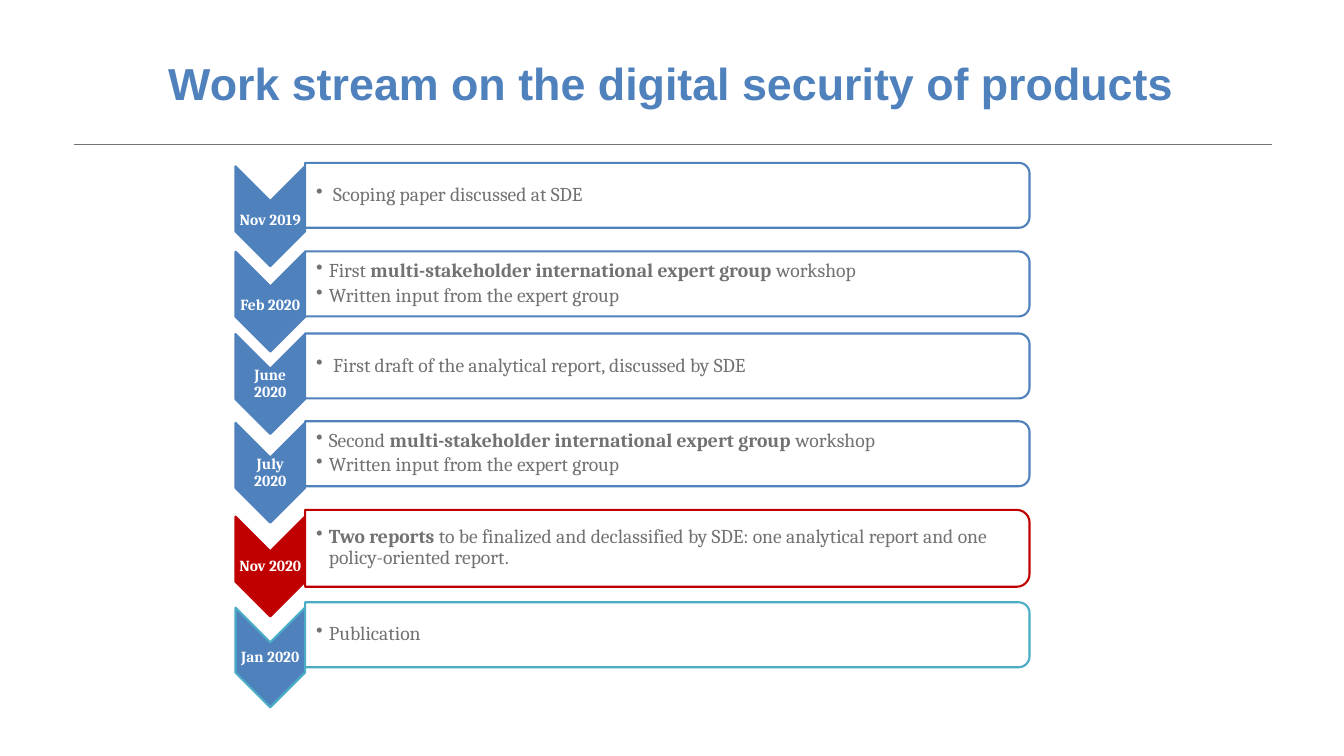
from dataclasses import dataclass

from lxml import etree
from pptx import Presentation
from pptx.dml.color import RGBColor
from pptx.enum.shapes import MSO_CONNECTOR as CONN, MSO_SHAPE as SHAPE
from pptx.enum.text import MSO_ANCHOR as ANCHOR, PP_ALIGN as ALIGN
from pptx.oxml.ns import qn
from pptx.util import Pt

BLUE = RGBColor(0x4F, 0x81, 0xBD)
RED = RGBColor(0xC0, 0x00, 0x00)
TEAL = RGBColor(0x4B, 0xAC, 0xC6)
GREY = RGBColor(0x72, 0x72, 0x72)
WHITE = RGBColor(0xFF, 0xFF, 0xFF)

CHEVRON_W, CHEVRON_H = 49.7, 71.3
LABEL_H = 21.6
BULLET_INDENT = 9


@dataclass
class Step:
    """One milestone: label lines, bullets of (text, bold) runs, and placement."""
    label: list
    bullets: list
    chevron_top: float
    card_top: float
    card_h: float = 46.4
    label_drop: float = 0
    fill: RGBColor = BLUE
    line: RGBColor = BLUE


def workshop(ordinal):
    """Return the bullets of an expert group workshop."""
    return [
        [(ordinal + " ", False),
         ("multi-stakeholder international expert group ", True),
         ("workshop", False)],
        [("Written input from the expert group", False)],
    ]


STEPS = [
    Step(["Nov 2019"], [[(" Scoping paper discussed at SDE", False)]],
         118.8, 116.3, label_drop=3),
    Step(["Feb 2020"], workshop("First"), 179.8, 179.6, label_drop=3),
    Step(["June", "2020"],
         [[(" First draft of the analytical report, discussed by SDE", False)]],
         238.6, 238.2),
    Step(["July", "2020"], workshop("Second"), 302, 300.9),
    Step(["Nov 2020"],
         [[("Two reports ", True),
           ("to be finalized and declassified by SDE: one analytical report "
            "and one policy-oriented report.", False)]],
         369, 364.2, card_h=54.9, fill=RED, line=RED),
    Step(["Jan 2020"], [[("Publication", False)]], 434, 430.2, line=TEAL),
]


def add_run(p, text, font, size, color, bold):
    """Add one formatted run to a paragraph."""
    r = p.add_run()
    r.text = text
    r.font.name, r.font.size, r.font.bold = font, Pt(size), bold
    r.font.color.rgb = color


def add_text_box(slide, x, y, w, h, insets):
    """Add a wrapping, vertically centred text box and return its frame."""
    tf = slide.shapes.add_textbox(Pt(x), Pt(y), Pt(w), Pt(h)).text_frame
    tf.word_wrap = True
    tf.vertical_anchor = ANCHOR.MIDDLE
    tf.margin_left, tf.margin_top, tf.margin_right, tf.margin_bottom = map(Pt, insets)
    return tf


def add_turned(slide, kind, x, y, w, h, fill, line):
    """Add a shape turned a quarter clockwise that fills the given box."""
    sp = slide.shapes.add_shape(
        kind, Pt(x + (w - h) / 2), Pt(y + (h - w) / 2), Pt(h), Pt(w))
    sp.rotation = 90
    sp.shadow.inherit = False
    sp.fill.solid()
    sp.fill.fore_color.rgb = fill
    sp.line.color.rgb = line
    sp.line.width = Pt(1.5)


def add_bullet(p):
    """Give a paragraph a hanging round bullet."""
    pPr = p._p.get_or_add_pPr()
    pPr.set("marL", str(Pt(BULLET_INDENT)))
    pPr.set("indent", str(-Pt(BULLET_INDENT)))
    etree.SubElement(pPr, qn("a:buChar")).set("char", "•")


def add_header(slide, x, y, w, h):
    """Place the title above a thin rule at the foot of the box."""
    tf = add_text_box(slide, x + 60.5, y, w - 78, h - 3.6, (7.2, 3.6, 7.2, 3.6))
    add_run(tf.paragraphs[0], "Work stream on the digital security of products",
            "Arial", 32, BLUE, True)
    rule = slide.shapes.add_connector(CONN.STRAIGHT, Pt(x), Pt(y + h), Pt(x + w), Pt(y + h))
    rule.line.color.rgb = GREY
    rule.line.width = Pt(0.5)
    etree.SubElement(rule._element.spPr, qn("a:effectLst"))


def add_chevron(slide, step, x, y):
    """Place the downward chevron and its date."""
    add_turned(slide, SHAPE.CHEVRON, x, y, CHEVRON_W, CHEVRON_H, step.fill, step.line)
    label_y = y + (CHEVRON_H - LABEL_H) / 2 + step.label_drop
    tf = add_text_box(slide, x, label_y, CHEVRON_W, LABEL_H, (0, 0, 0, 0))
    p = tf.paragraphs[0]
    p.alignment = ALIGN.CENTER
    p.line_spacing = 0.9
    for i, text in enumerate(step.label):
        if i:
            p.add_line_break()
        add_run(p, text, "Cambria", 11, WHITE, True)


def add_card(slide, step, x, y, w, h):
    """Place the rounded card and its bullets."""
    add_turned(slide, SHAPE.ROUND_2_SAME_RECTANGLE, x, y, w, h, WHITE, step.line)
    tf = add_text_box(slide, x, y + 2, w - 3, h - 4.4, (8, 0.7, 0.7, 0.7))
    for i, runs in enumerate(step.bullets):
        p = tf.add_paragraph() if i else tf.paragraphs[0]
        p.line_spacing = 0.9
        p.space_after = Pt(2.1)
        add_bullet(p)
        for text, bold in runs:
            add_run(p, text, "Cambria", 14, GREY, bold)


def add_timeline(slide, x, w):
    """Place every milestone in a column of the given width."""
    for step in STEPS:
        add_chevron(slide, step, x, step.chevron_top)
        add_card(slide, step, x + CHEVRON_W, step.card_top, w - CHEVRON_W, step.card_h)


def main():
    """Build and save the slide."""
    prs = Presentation()
    prs.slide_width, prs.slide_height = Pt(960), Pt(540)
    slide = prs.slides.add_slide(prs.slide_layouts[6])
    add_header(slide, 52.6, 18.7, 856, 84.3)
    add_timeline(slide, 168.2, 567.2)
    prs.save("out.pptx")


if __name__ == "__main__":
    main()
